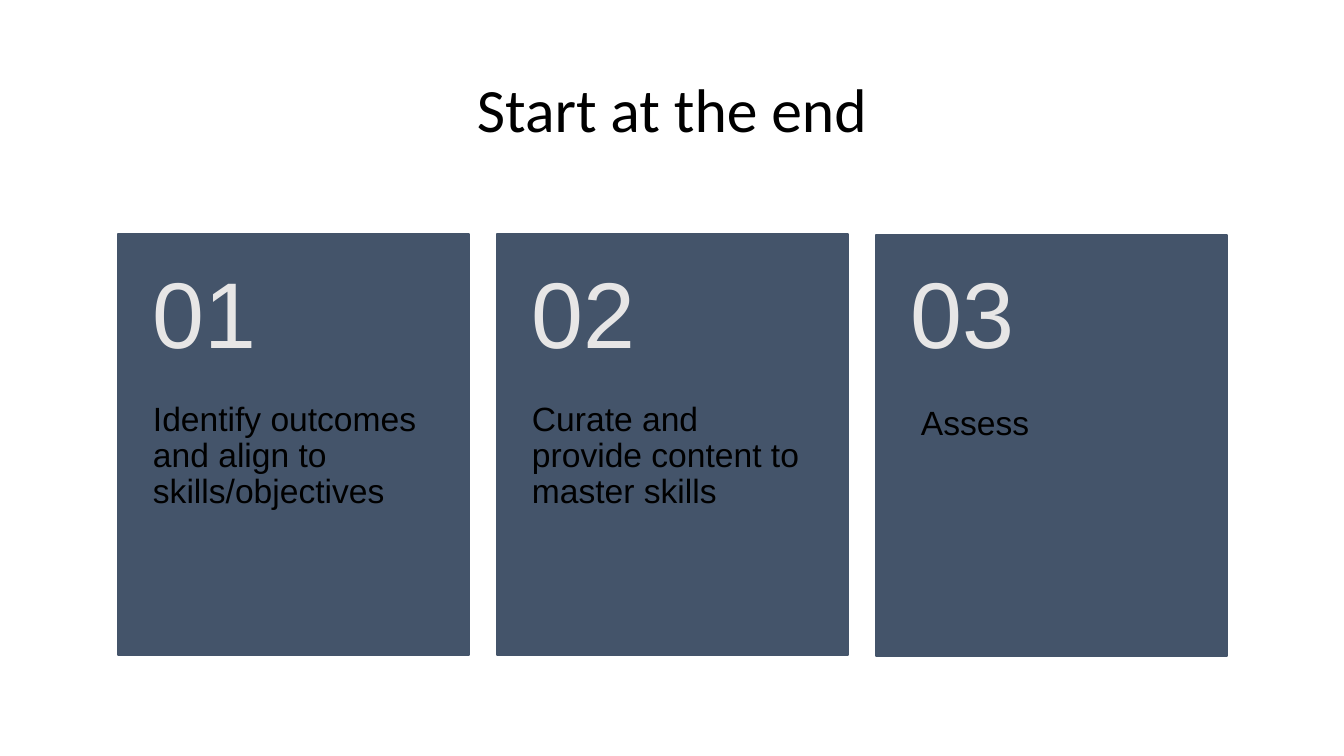
"""Build the "Start at the end" slide with three numbered step cards."""
import dataclasses

import pptx
import pptx.dml.color
import pptx.enum.shapes
import pptx.enum.text
import pptx.shapes.base
import pptx.slide
import pptx.util

EMU_PER_PX = 914400 / 134.4
COLORS = {"card": "44546A", "number": "E7E6E6", "text": "000000"}
CARD_LEFT, CARD_TOP, CARD_PITCH = 118, 234, 379
CARD_WIDTH, CARD_HEIGHT, NUMBER_HEIGHT = 351, 421, 168
TOP, MIDDLE = pptx.enum.text.MSO_ANCHOR.TOP, pptx.enum.text.MSO_ANCHOR.MIDDLE


@dataclasses.dataclass(frozen=True)
class Box:
    left: int
    top: int
    width: int
    height: int

    def emu(self) -> list[int]:
        return [px(value) for value in dataclasses.astuple(self)]


@dataclasses.dataclass(frozen=True)
class TextStyle:
    font: str
    size: int
    color: str
    anchor: pptx.enum.text.MSO_ANCHOR
    insets: tuple[int, int, int, int]
    alignment: pptx.enum.text.PP_ALIGN = pptx.enum.text.PP_ALIGN.LEFT


@dataclasses.dataclass(frozen=True)
class Step:
    number: str
    label: str
    card_drop: int = 0
    label_shift: int = 0
    label_drop: int = 0


TITLE_STYLE = TextStyle("Calibri", 33, "text", MIDDLE, (9, 5, 9, 5),
                        pptx.enum.text.PP_ALIGN.CENTER)
NUMBER_STYLE = TextStyle("Arial", 50, "number", MIDDLE, (35, 19, 35, 19))
LABEL_STYLE = TextStyle("Arial", 18, "text", TOP, (35, 0, 35, 36))
STEPS = [
    Step("01", "Identify outcomes and align to skills/objectives"),
    Step("02", "Curate and provide content to master skills"),
    Step("03", "Assess", card_drop=1, label_shift=10, label_drop=4),
]


def px(value: int) -> int:
    return round(value * EMU_PER_PX)


def color(name: str) -> pptx.dml.color.RGBColor:
    return pptx.dml.color.RGBColor.from_string(COLORS[name])


def write_text(shape: pptx.shapes.base.BaseShape, text: str, style: TextStyle) -> None:
    frame = shape.text_frame
    frame.text = text
    frame.word_wrap = True
    frame.auto_size = pptx.enum.text.MSO_AUTO_SIZE.NONE
    frame.vertical_anchor = style.anchor
    (frame.margin_left, frame.margin_top,
     frame.margin_right, frame.margin_bottom) = map(px, style.insets)
    paragraph = frame.paragraphs[0]
    paragraph.alignment = style.alignment
    paragraph.line_spacing = 0.9
    paragraph.font.name = style.font
    paragraph.font.size = pptx.util.Pt(style.size)
    paragraph.font.color.rgb = color(style.color)


def add_title(slide: pptx.slide.Slide, text: str, box: Box) -> None:
    title = slide.shapes.title
    title.left, title.top, title.width, title.height = box.emu()
    write_text(title, text, TITLE_STYLE)


def add_step(slide: pptx.slide.Slide, step: Step, left: int) -> None:
    shapes = slide.shapes.add_group_shape().shapes
    card_box = Box(left, CARD_TOP + step.card_drop, CARD_WIDTH, CARD_HEIGHT)
    card = shapes.add_shape(pptx.enum.shapes.MSO_SHAPE.RECTANGLE, *card_box.emu())
    card.shadow.inherit = False
    card.fill.solid()
    card.fill.fore_color.rgb = color("card")
    card.line.color.rgb = color("card")
    card.line.width = pptx.util.Pt(1)

    label_box = Box(left + step.label_shift, CARD_TOP + NUMBER_HEIGHT + step.label_drop,
                    CARD_WIDTH, CARD_HEIGHT - NUMBER_HEIGHT)
    write_text(shapes.add_textbox(*label_box.emu()), step.label, LABEL_STYLE)

    number_box = Box(left, CARD_TOP, CARD_WIDTH, NUMBER_HEIGHT)
    write_text(shapes.add_textbox(*number_box.emu()), step.number, NUMBER_STYLE)


def main() -> None:
    presentation = pptx.Presentation()
    presentation.slide_width, presentation.slide_height = px(1344), px(756)
    slide = presentation.slides.add_slide(presentation.slide_layouts.get_by_name("Title Only"))
    add_title(slide, "Start at the end", Box(93, 40, 1158, 146))
    for index, step in enumerate(STEPS):
        add_step(slide, step, CARD_LEFT + index * CARD_PITCH)
    presentation.save("out.pptx")


if __name__ == "__main__":
    main()
